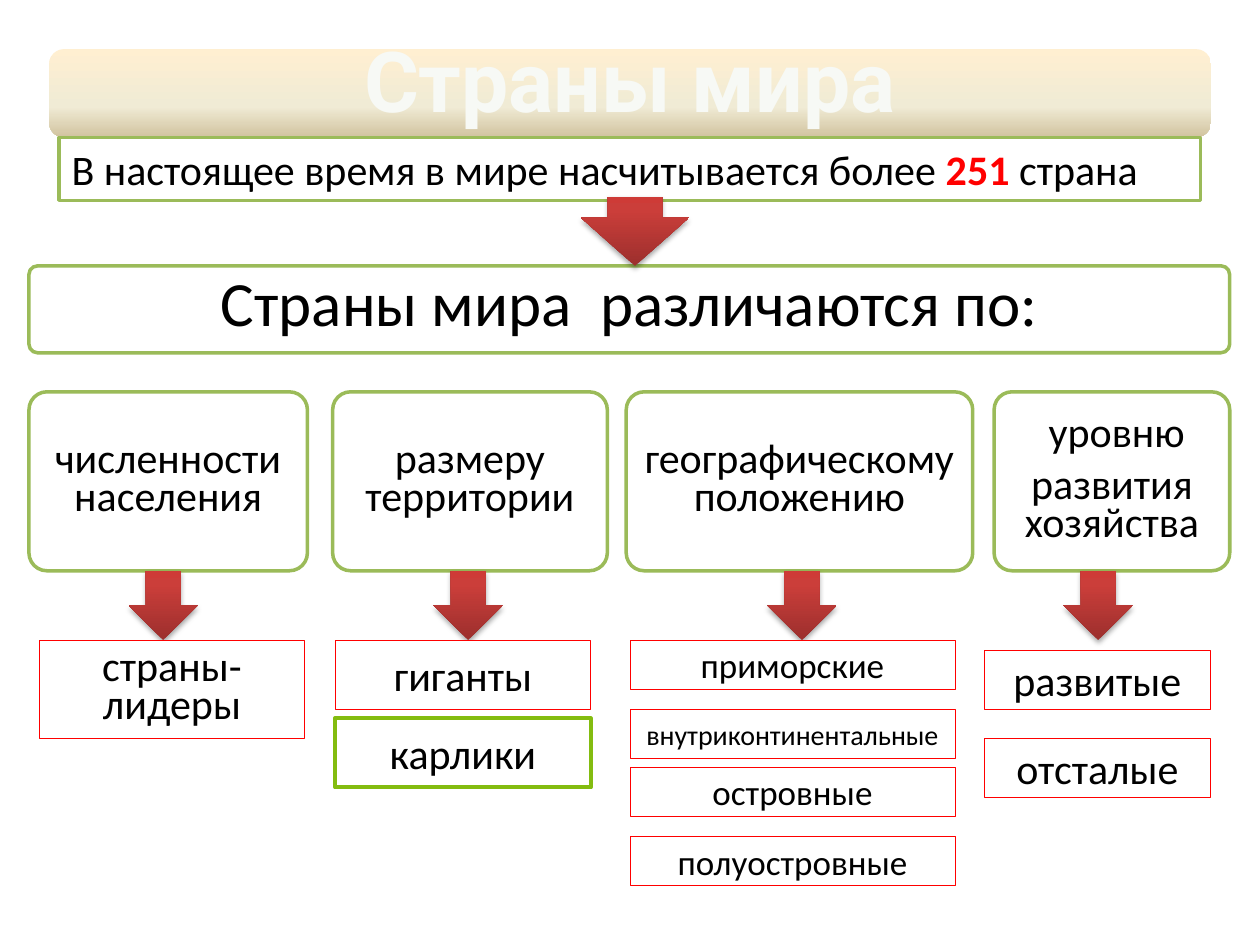
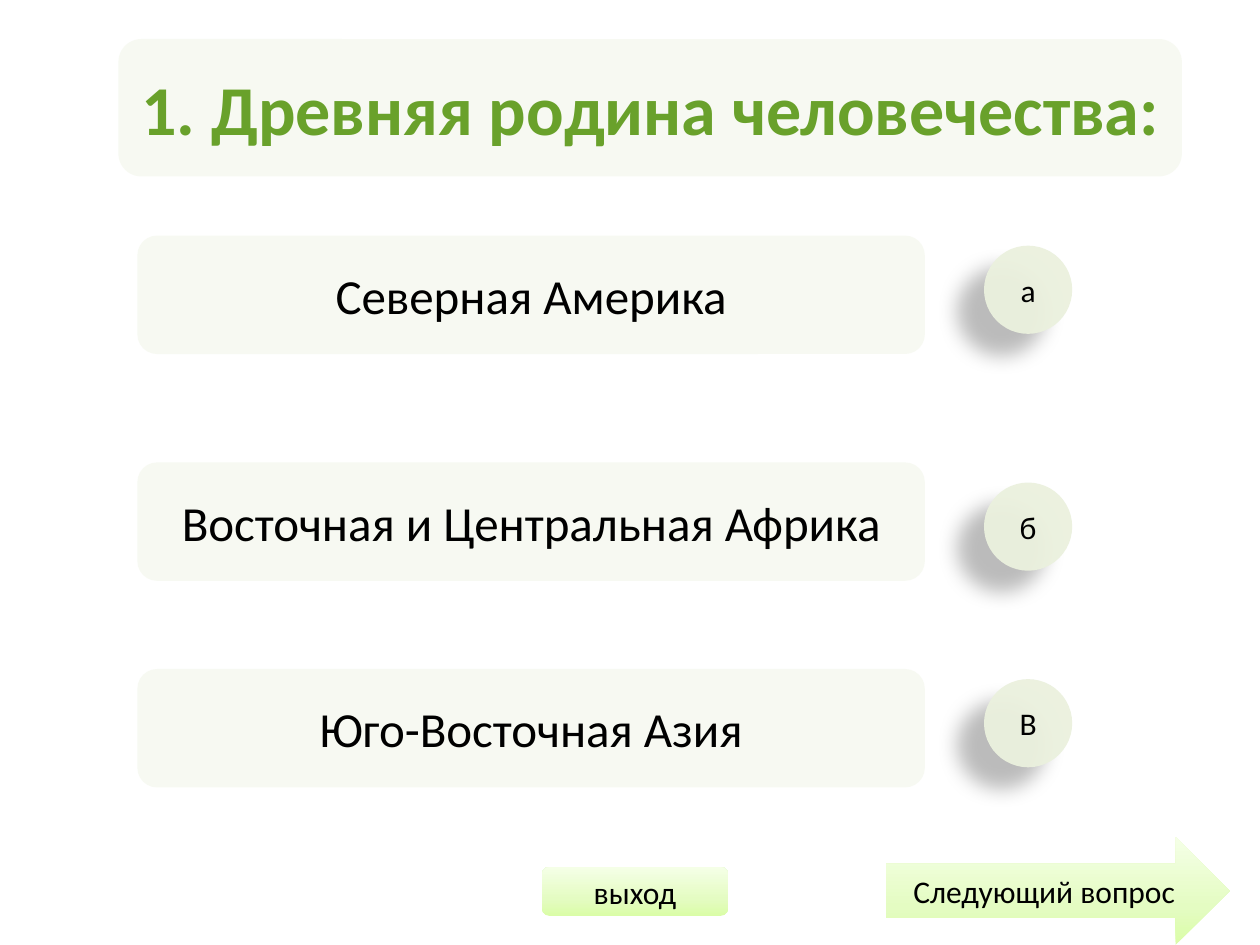
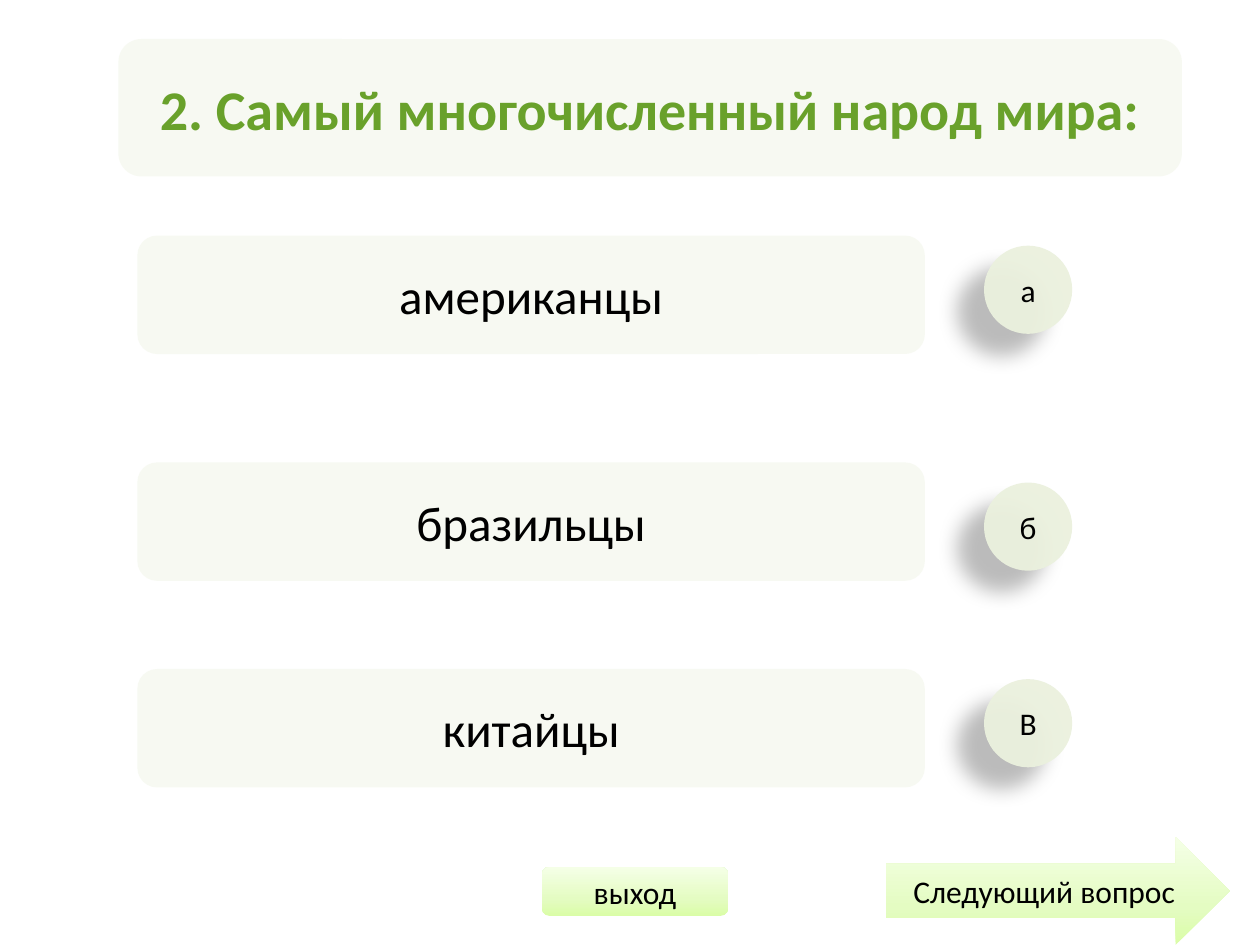
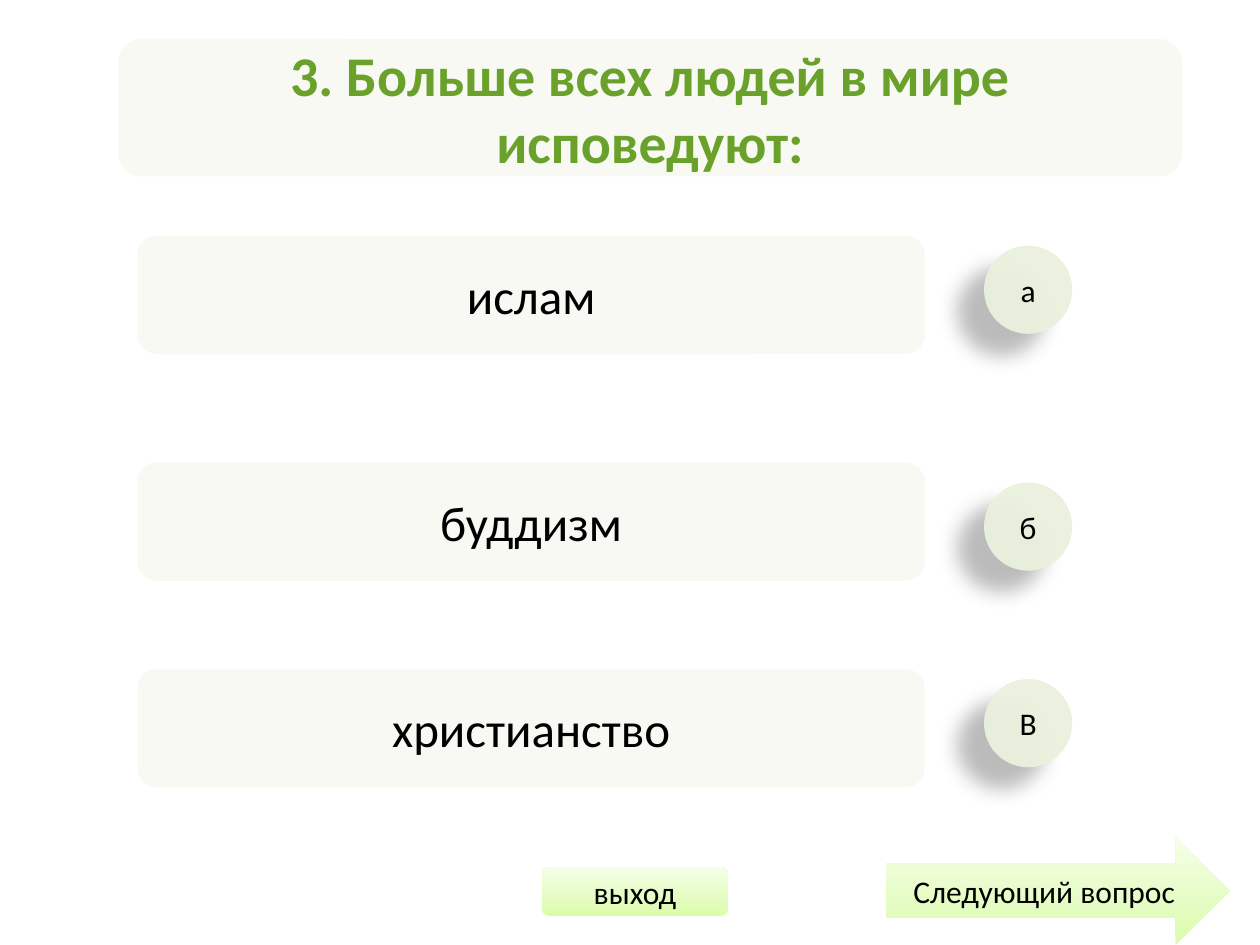
from lxml.etree import SubElement as Sub
from pptx import Presentation
from pptx.dml.color import RGBColor as RGB
from pptx.enum.shapes import MSO_SHAPE as Kind
from pptx.enum.text import MSO_ANCHOR as Anchor, PP_ALIGN as Align
from pptx.oxml.ns import qn
from pptx.util import Inches, Pt

HEX = {
    "white": "FFFFFF", "black": "000000", "red": "FF0000",
    "green": "9BBB59", "lime": "83BC10", "leaf": "69A12B",
    "pale": "EBF1DE", "glow": "ACEC28", "edge": "F7F9F5",
}
GRADS = {
    "sand": (90, [(0, "FFEFD1"), (65, "F0EBD5"), (100, "D1C39F")]),
    "brick": (270, [(0, "9C2F2D"), (80, "CB3E3A"), (100, "CE3B37")]),
    "mint": (270, [(0, "DAFDA7"), (35, "E4FCC2"), (100, "F5FFE7")]),
}
FONT = "Calibri"


def paint(parent, color, alpha=100):
    node = Sub(parent, qn("a:srgbClr"), val=HEX.get(color, color))
    if alpha < 100:
        Sub(node, qn("a:alpha"), val=str(alpha * 1000))


def blend(shape, name):
    angle, stops = GRADS[name]
    shape.fill.gradient()
    shape.fill.gradient_angle = 360 - angle
    rows = shape._element.spPr.find(".//" + qn("a:gsLst"))
    for old in list(rows):
        rows.remove(old)
    for pos, color in stops:
        paint(Sub(rows, qn("a:gs"), pos=str(pos * 1000)), color)


def flat(shape, color, alpha=100):
    shape.fill.solid()
    shape.fill.fore_color.rgb = RGB.from_string(HEX[color])
    if alpha < 100:
        node = shape._element.spPr.find(".//" + qn("a:srgbClr"))
        Sub(node, qn("a:alpha"), val=str(alpha * 1000))


def shade(shape, alpha, dist, blur, angle):
    effects = shape._element.spPr.find(qn("a:effectLst"))
    node = Sub(effects, qn("a:outerShdw"), blurRad=str(Pt(blur)),
               dist=str(Pt(dist)), dir=str(angle * 60000), rotWithShape="0")
    paint(node, "black", alpha)


def draw(slide, kind, at, fill, alpha=100, line=None, adj=()):
    shape = slide.shapes.add_shape(kind, *map(Inches, at))
    shape.shadow.inherit = False
    for i, val in enumerate(adj):
        shape.adjustments[i] = val
    if fill in GRADS:
        blend(shape, fill)
    else:
        flat(shape, fill, alpha)
    if line:
        shape.line.color.rgb = RGB.from_string(HEX[line[0]])
        shape.line.width = Pt(line[1])
    else:
        shape.line.fill.background()
    return shape


def add_run(para, text, size, color="black", bold=False, font=FONT):
    run = para.add_run()
    run.text = text
    run.font.size = Pt(size)
    run.font.name = font
    run.font.bold = bold
    run.font.color.rgb = RGB.from_string(HEX[color])
    return run


def write(shape, text, size, color="black", bold=False, font=FONT,
          lead=None, after=None, inset=None):
    frame = shape.text_frame
    frame.word_wrap = True
    frame.vertical_anchor = Anchor.MIDDLE
    if inset is not None:
        frame.margin_left = frame.margin_right = Inches(inset)
        frame.margin_top = frame.margin_bottom = Inches(inset)
    for i, part in enumerate(text.split("\n")):
        para = frame.add_paragraph() if i else frame.paragraphs[0]
        para.alignment = Align.CENTER
        if lead:
            para.line_spacing = lead
        if after:
            para.space_after = Pt(after)
        run = add_run(para, part, size, color, bold, font)
    return run


def banner(slide, text):
    shape = draw(slide, Kind.ROUNDED_RECTANGLE, (0.39, 0.39, 9.22, 0.7), "sand")
    run = write(shape, text, 48, "glow", True, "Roboto", lead=0.65)
    props = run.font._element
    Sub(props.find(".//" + qn("a:srgbClr")), qn("a:alpha"), val="50000")
    edge = props.makeelement(qn("a:ln"), {"w": str(Pt(2.3))})
    paint(Sub(edge, qn("a:solidFill")), "edge")
    props.insert(0, edge)


def fact(slide, parts):
    shape = draw(slide, Kind.RECTANGLE, (0.47, 1.09, 9.06, 0.5), "white", 39,
                 ("green", 2))
    frame = shape.text_frame
    frame.word_wrap = True
    frame.vertical_anchor = Anchor.TOP
    para = frame.paragraphs[0]
    para.alignment = Align.LEFT
    for text, color, bold in parts:
        add_run(para, text, 24, color, bold)


def card(slide, at, text, size, pad, inset):
    draw(slide, Kind.ROUNDED_RECTANGLE, at, "white", 75, ("green", 2), (0.1,))
    x, y, w, h = at
    area = (x + pad, y + pad, w - 2 * pad, h - 2 * pad)
    box = slide.shapes.add_textbox(*map(Inches, area))
    write(box, text, size, lead=0.75, after=size * 0.35, inset=inset)


def arrow(slide, at, adj=()):
    shape = draw(slide, Kind.DOWN_ARROW, at, "brick", adj=adj)
    shade(shape, 35, 1.8, 3.1, 90)


def label(slide, at, text, size=24, line=("red", 0.5), lead=None):
    write(draw(slide, Kind.RECTANGLE, at, "white", line=line), text, size,
          lead=lead)


def world(slide):
    banner(slide, "Страны мира")
    fact(slide, [("В настоящее время в мире насчитывается более ", "black", False),
                 ("251", "red", True), (" страна", "black", False)])
    card(slide, (0.23, 2.11, 9.53, 0.69), "Страны мира  различаются по:",
         36, 0.02, 0.15)
    for x, w, text in [(0.23, 2.21, "численности населения"),
                       (2.64, 2.18, "размеру территории"),
                       (4.97, 2.75, "географическому положению"),
                       (7.89, 1.87, " уровню\nразвития хозяйства")]:
        card(slide, (x, 3.11, w, 1.42), text, 24, 0.04, 0.1)
    arrow(slide, (4.61, 1.56, 0.86, 0.55), (0.5, 0.697))
    for x in (1.02, 3.44, 6.09, 8.44):
        arrow(slide, (x, 4.53, 0.55, 0.55))
    label(slide, (0.31, 5.08, 2.11, 0.78), "страны-\nлидеры", lead=0.75)
    label(slide, (2.66, 5.08, 2.03, 0.55), "гиганты")
    label(slide, (2.66, 5.7, 2.03, 0.55), "карлики", line=("lime", 2.25))
    for y, text, size in [(5.08, "приморские", 20),
                          (5.63, "внутриконтинентальные", 16),
                          (6.09, "островные", 20),
                          (6.64, "полуостровные", 20)]:
        label(slide, (5, y, 2.58, 0.39), text, size)
    for y, text in [(5.16, "развитые"), (5.86, "отсталые")]:
        label(slide, (7.81, y, 1.8, 0.47), text)


def panel(slide, at, text, size, color="black", bold=False):
    shape = draw(slide, Kind.ROUNDED_RECTANGLE, at, "pale", 38)
    write(shape, text, size, color, bold)


def badge(slide, y, mark):
    shape = draw(slide, Kind.OVAL, (7.81, y, 0.7, 0.7), "pale", 95)
    shade(shape, 28, 19.7, 11.8, 141)
    write(shape, mark, 18)


def button(slide, kind, at, text):
    write(draw(slide, kind, at, "mint"), text, 18)


def quiz(slide, title, size, answers):
    for y, mark in zip((1.95, 3.83, 5.39), "абВ"):
        badge(slide, y, mark)
    panel(slide, (0.94, 0.31, 8.44, 1.09), title, size, "leaf", True)
    for y, text in zip((1.87, 3.67, 5.31), answers):
        panel(slide, (1.09, y, 6.25, 0.94), text, 28)
    button(slide, Kind.ROUNDED_RECTANGLE, (4.3, 6.88, 1.48, 0.39), "выход")
    button(slide, Kind.RIGHT_ARROW, (7.03, 6.64, 2.73, 0.86), "Следующий вопрос")


def main():
    deck = Presentation()
    deck.slide_width, deck.slide_height = Inches(10), Inches(7.5)
    blank = deck.slide_layouts[6]
    world(deck.slides.add_slide(blank))
    for title, size, answers in [
        ("1. Древняя родина человечества:", 40,
         ("Северная Америка", "Восточная и Центральная Африка",
          "Юго-Восточная Азия")),
        ("2. Самый многочисленный народ мира:", 32,
         ("американцы", "бразильцы", "китайцы")),
        ("3. Больше всех людей в мире исповедуют:", 32,
         ("ислам", "буддизм", "христианство")),
    ]:
        quiz(deck.slides.add_slide(blank), title, size, answers)
    deck.save("out.pptx")


if __name__ == "__main__":
    main()
